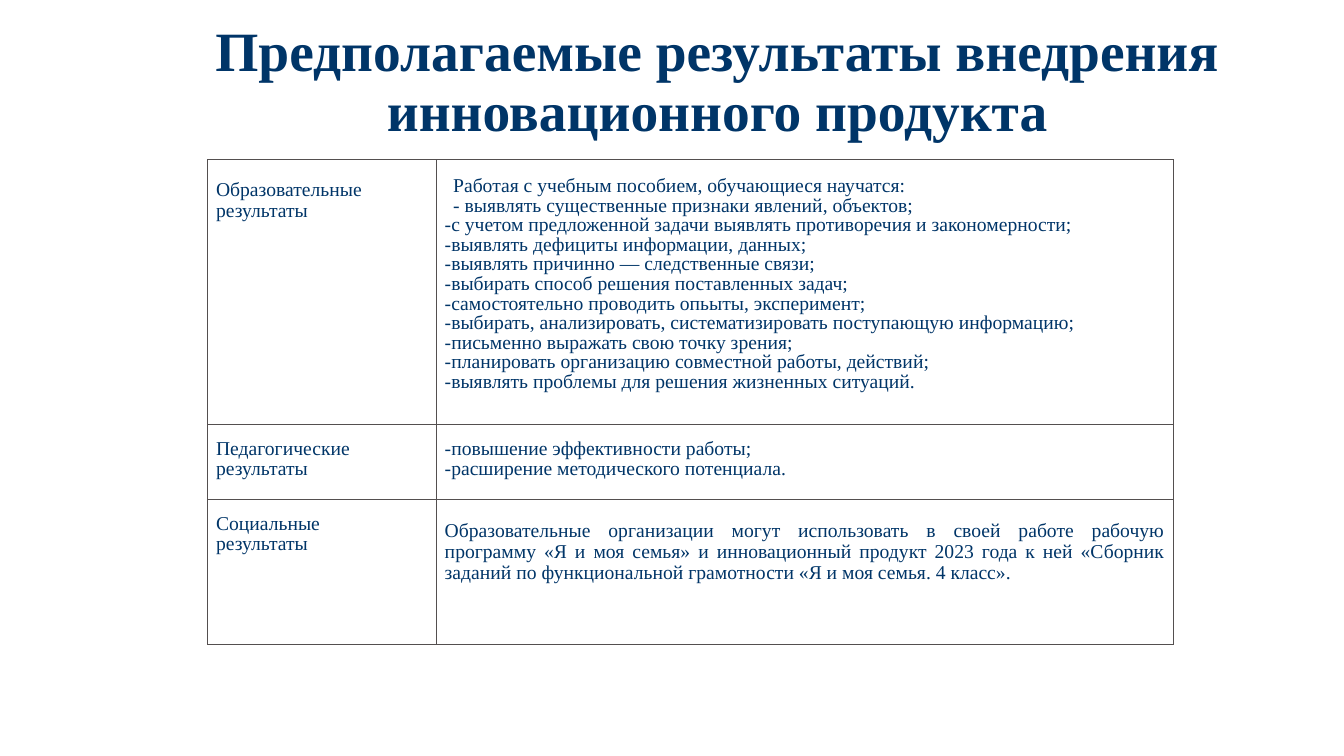
from lxml import etree
from pptx import Presentation
from pptx.dml.color import RGBColor
from pptx.enum.text import MSO_ANCHOR, PP_ALIGN
from pptx.oxml.ns import qn
from pptx.util import Pt

LEFT, CENTER, JUSTIFY = PP_ALIGN.LEFT, PP_ALIGN.CENTER, PP_ALIGN.JUSTIFY
MIDDLE = MSO_ANCHOR.MIDDLE
FONT = "Times New Roman"
NAVY = "003568"
BORDER = "544F4F"
COLUMNS = (163.4, 526.3)
ROWS = (189.4, 53.5, 103.7)
INTRO_INDENT = 6

EDUCATIONAL = (
    "Работая с учебным пособием, обучающиеся научатся:",
    "- выявлять существенные признаки явлений, объектов;",
    "-с учетом предложенной задачи выявлять противоречия и закономерности;",
    "-выявлять дефициты информации, данных;",
    "-выявлять причинно — следственные связи;",
    "-выбирать способ решения поставленных задач;",
    "-самостоятельно проводить опьыты, эксперимент;",
    "-выбирать, анализировать, систематизировать поступающую информацию;",
    "-письменно выражать свою точку зрения;",
    "-планировать организацию совместной работы, действий;",
    "-выявлять проблемы для решения жизненных ситуаций.",
)
PEDAGOGICAL = (
    "-повышение эффективности работы;",
    "-расширение методического потенциала.",
)
SOCIAL = (
    "Образовательные организации могут использовать в своей работе рабочую "
    "программу «Я и моя семья» и инновационный продукт 2023 года к ней "
    "«Сборник заданий по функциональной грамотности «Я и моя семья. 4 класс».",
)


def rgb(value):
    return RGBColor.from_string(value)


def style_paragraph(p, size, align, spacing, bold=False):
    p.alignment = align
    p.line_spacing = spacing
    p.font.name = FONT
    p.font.size = Pt(size)
    p.font.bold = bold
    p.font.color.rgb = rgb(NAVY)


def add_title(s, text):
    sp = s.shapes.add_textbox(Pt(130.3), Pt(28.8), Pt(763.9), Pt(61.2))
    tf = sp.text_frame
    tf.word_wrap = True
    tf.vertical_anchor = MIDDLE
    p = tf.paragraphs[0]
    p.text = text
    style_paragraph(p, 39.6, CENTER, 0.9, bold=True)


def add_borders(cell):
    tc_pr = cell._tc.get_or_add_tcPr()
    for side in ("a:lnL", "a:lnR", "a:lnT", "a:lnB"):
        ln = etree.SubElement(tc_pr, qn(side), w=str(Pt(1)))
        fill = etree.SubElement(ln, qn("a:solidFill"))
        etree.SubElement(fill, qn("a:srgbClr"), val=BORDER)


def fill_cell(cell, lines, top, pitch=14, align=LEFT, intro=0):
    add_borders(cell)
    cell.fill.background()
    cell.margin_left = cell.margin_right = Pt(6)
    cell.margin_top, cell.margin_bottom = Pt(top), 0
    tf = cell.text_frame
    for i, line in enumerate(lines):
        p = tf.paragraphs[0] if i == 0 else tf.add_paragraph()
        p.text = line
        if i < intro:
            p._p.get_or_add_pPr().set("marL", str(Pt(INTRO_INDENT)))
        style_paragraph(p, 14, align, Pt(pitch))


def add_results_table(s):
    table = s.shapes.add_table(
        len(ROWS), len(COLUMNS), Pt(148.3), Pt(114), Pt(sum(COLUMNS)), Pt(sum(ROWS))
    ).table
    table.first_row = table.horz_banding = False
    for column, width in zip(table.columns, COLUMNS):
        column.width = Pt(width)
    for row, height in zip(table.rows, ROWS):
        row.height = Pt(height)

    fill_cell(table.cell(0, 0), ("Образовательные результаты",), 14.5, pitch=15)
    fill_cell(table.cell(0, 1), EDUCATIONAL, 12.5, intro=2)
    fill_cell(table.cell(1, 0), ("Педагогические", "результаты"), 11)
    fill_cell(table.cell(1, 1), PEDAGOGICAL, 11)
    fill_cell(table.cell(2, 0), ("Социальные", "результаты"), 11)
    fill_cell(table.cell(2, 1), SOCIAL, 15, pitch=15, align=JUSTIFY)


def main():
    prs = Presentation()
    prs.slide_width, prs.slide_height = Pt(960), Pt(540)
    s = prs.slides.add_slide(prs.slide_layouts[6])
    add_title(s, "Предполагаемые результаты внедрения инновационного продукта")
    add_results_table(s)
    prs.save("out.pptx")


if __name__ == "__main__":
    main()
